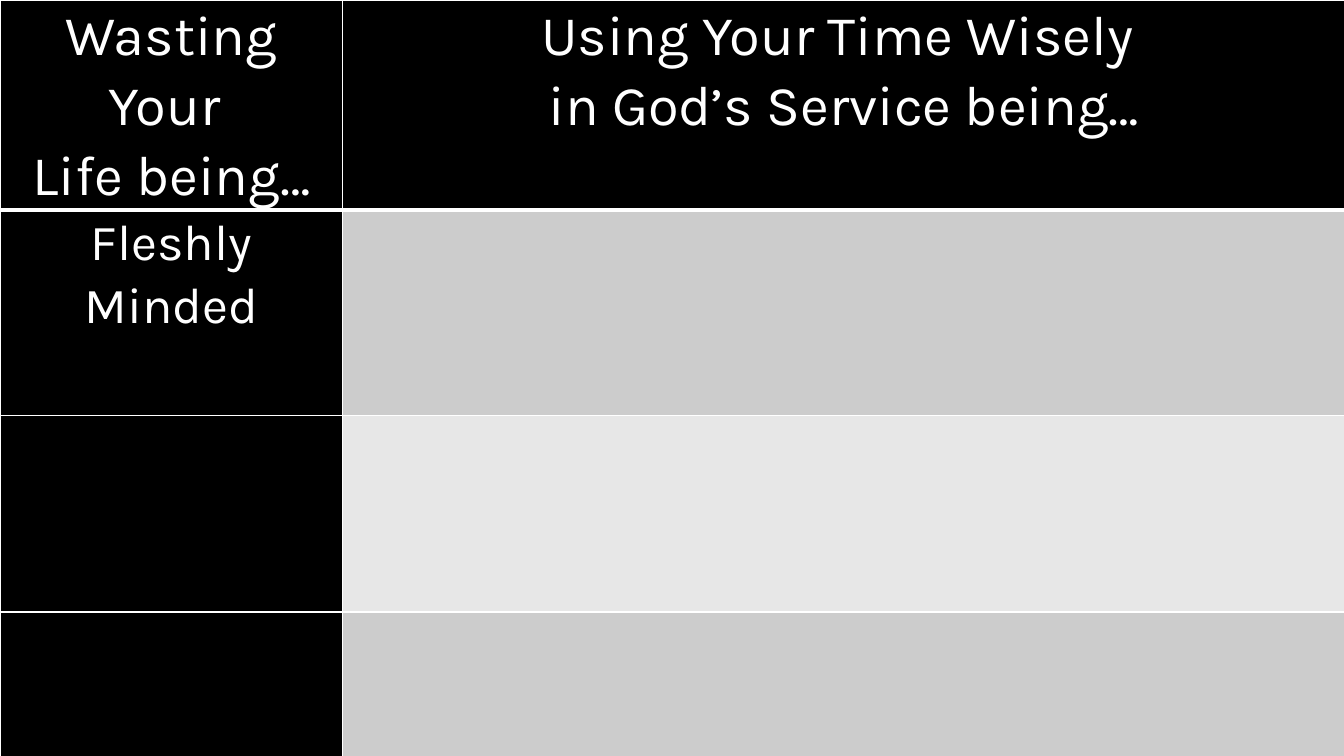
from dataclasses import dataclass

from lxml.etree import SubElement
from pptx import Presentation
from pptx.dml.color import RGBColor
from pptx.enum.text import PP_ALIGN
from pptx.oxml.ns import qn
from pptx.table import _Cell
from pptx.util import Inches, Pt

FONT = "Karla"
BLACK, WHITE, GREY, LIGHT = "000000", "FFFFFF", "CCCCCC", "E7E7E7"
COLUMN_WIDTHS = (3.4, 9.94)
ROW_HEIGHTS = (1.58, 2.04, 1.95, 1.92)
THIN, THICK = 1, 3


@dataclass(frozen=True)
class CellSpec:
    """Fill, paragraphs and text size of one table cell."""

    fill: str
    lines: tuple[str, ...] = ()
    size: int = 40


ROWS = (
    (
        CellSpec(BLACK, ("Wasting Your ", "Life being…")),
        CellSpec(BLACK, ("Using Your Time Wisely ", "in God’s Service being…")),
    ),
    (CellSpec(BLACK, ("Fleshly Minded",), 36), CellSpec(GREY)),
    (CellSpec(BLACK), CellSpec(LIGHT)),
    (CellSpec(BLACK), CellSpec(GREY)),
)


def rgb(color: str) -> RGBColor:
    """Return the colour for a hex string."""
    return RGBColor.from_string(color)


def add_borders(cell: _Cell, top: int, bottom: int) -> None:
    """Draw white borders, thin at the sides and as given above and below."""
    tc_pr = cell._tc.get_or_add_tcPr()
    widths = {"a:lnL": THIN, "a:lnR": THIN, "a:lnT": top, "a:lnB": bottom}
    for tag, width in widths.items():
        ln = SubElement(tc_pr, qn(tag), w=str(Pt(width)))
        fill = SubElement(ln, qn("a:solidFill"))
        SubElement(fill, qn("a:srgbClr"), val=WHITE)


def fill_cell(cell: _Cell, spec: CellSpec, row: int) -> None:
    """Format one cell and write its text."""
    add_borders(cell, THICK if row == 1 else THIN, THICK if row == 0 else THIN)
    cell.fill.solid()
    cell.fill.fore_color.rgb = rgb(spec.fill)
    cell.margin_left = cell.margin_right = Inches(0.07)
    cell.margin_top = cell.margin_bottom = Inches(0)
    tf = cell.text_frame
    for i, line in enumerate(spec.lines):
        p = tf.paragraphs[0] if i == 0 else tf.add_paragraph()
        p.alignment = PP_ALIGN.CENTER
        p.line_spacing = 1.07
        r = p.add_run()
        r.text = line
        r.font.name = FONT
        r.font.size = Pt(spec.size)
        r.font.color.rgb = rgb(WHITE)


def main() -> None:
    """Build the slide and save it."""
    prs = Presentation()
    prs.slide_width, prs.slide_height = Inches(13.33), Inches(7.5)
    s = prs.slides.add_slide(prs.slide_layouts[6])
    s.background.fill.solid()
    s.background.fill.fore_color.rgb = rgb(BLACK)

    table = s.shapes.add_table(
        len(ROWS), len(COLUMN_WIDTHS), 0, 0, prs.slide_width, prs.slide_height
    ).table
    table.first_row = table.horz_banding = False
    for column, width in zip(table.columns, COLUMN_WIDTHS):
        column.width = Inches(width)
    for row, height in zip(table.rows, ROW_HEIGHTS):
        row.height = Inches(height)
    for i, specs in enumerate(ROWS):
        for j, spec in enumerate(specs):
            fill_cell(table.cell(i, j), spec, i)

    prs.save("out.pptx")


if __name__ == "__main__":
    main()
